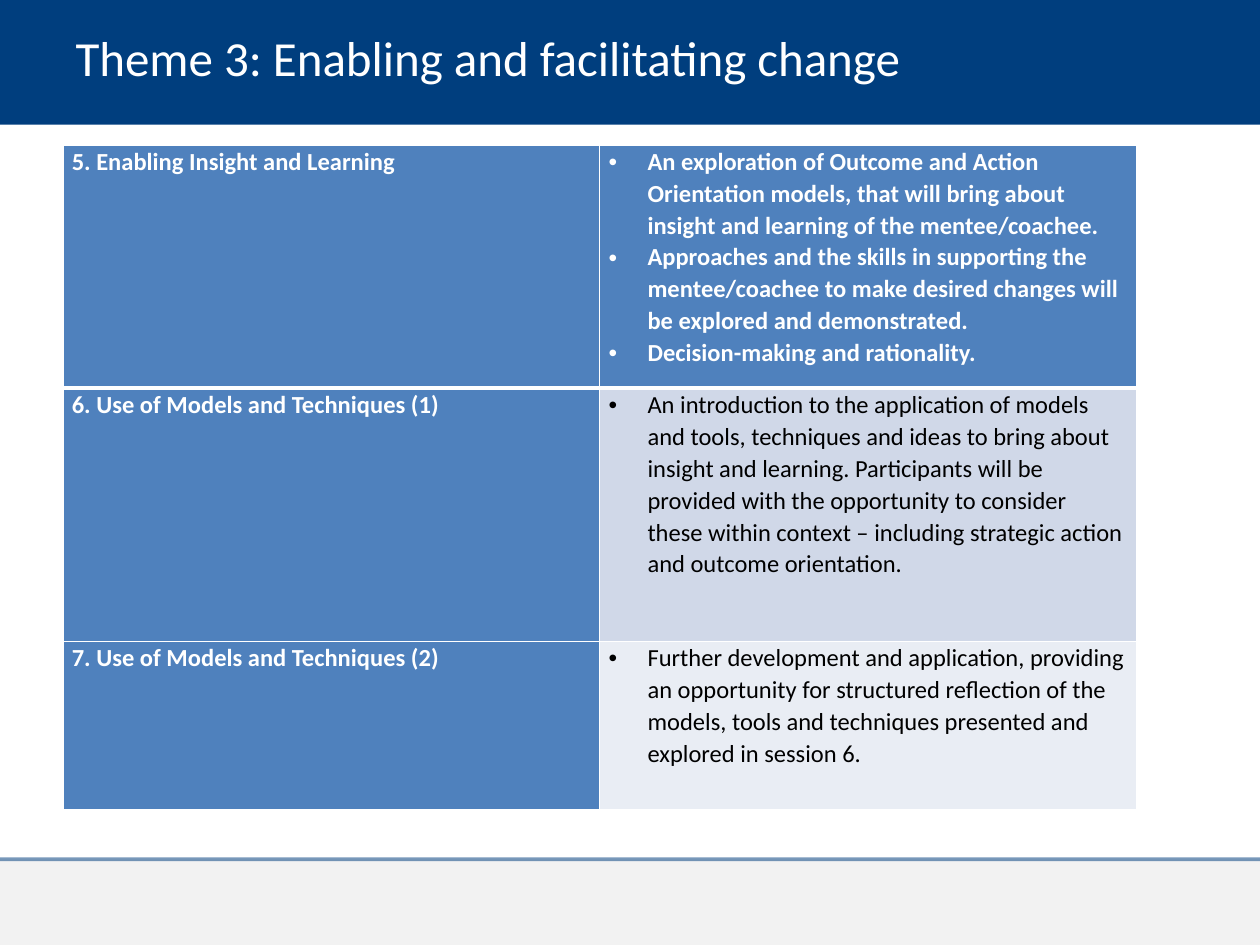
from dataclasses import dataclass

from lxml.etree import SubElement
from pptx import Presentation
from pptx.dml.color import RGBColor
from pptx.enum.shapes import MSO_CONNECTOR, MSO_SHAPE
from pptx.enum.text import MSO_ANCHOR, PP_ALIGN
from pptx.oxml.ns import qn
from pptx.util import Inches, Pt


@dataclass(frozen=True)
class Theme:
    """Hold the colours, font and type sizes."""
    navy: str = "003E7E"
    grey: str = "808080"
    blue: str = "4F81BD"
    mid: str = "D0D8E8"
    pale: str = "E9EDF4"
    white: str = "FFFFFF"
    black: str = "000000"
    face: str = "Calibri"
    head: int = 28
    body: int = 14


THEME = Theme()
TITLE = "Theme 3: Enabling and facilitating change"
ROWS = [
    (1.93, "5. Enabling Insight and Learning", THEME.blue, [
        "An exploration of Outcome and Action Orientation models, that will "
        "bring about insight and learning of the mentee/coachee.",
        "Approaches and the skills in supporting the mentee/coachee to make "
        "desired changes will be explored and demonstrated.",
        "Decision-making and rationality."]),
    (2.01, "6. Use of Models and Techniques (1)", THEME.mid, [
        "An introduction to the application of models and tools, techniques "
        "and ideas to bring about insight and learning. Participants will be "
        "provided with the opportunity to consider these within context – "
        "including strategic action and outcome orientation."]),
    (1.34, "7. Use of Models and Techniques (2)", THEME.pale, [
        "Further development and application, providing an opportunity for "
        "structured reflection of the models, tools and techniques presented "
        "and explored in session 6."]),
]


def apply(item, form):
    """Set each attribute of an item from a dict."""
    for name, value in form.items():
        setattr(item, name, value)


def style(font, size, tone, bold=False):
    """Format a font in the theme face."""
    apply(font, {"name": THEME.face, "size": Pt(size), "bold": bold})
    font.color.rgb = RGBColor.from_string(tone)


def fade(shape, share):
    """Give the first colour of a shape an opacity in percent."""
    tone = next(shape.element.spPr.iter(qn("a:srgbClr")))
    SubElement(tone, qn("a:alpha"), val=str(share * 1000))


def band(slide, box, tone):
    """Draw a plain filled band in the box."""
    shape = slide.shapes.add_shape(MSO_SHAPE.RECTANGLE, *map(Inches, box))
    shape.shadow.inherit = False
    shape.fill.solid()
    shape.fill.fore_color.rgb = RGBColor.from_string(tone)
    shape.line.fill.background()
    return shape


def header(slide, box):
    """Place the title on its navy band."""
    left, top, width, height = box
    band(slide, box, THEME.navy)
    title = slide.shapes.title
    slide.shapes.element.append(title.element)
    apply(title, {"left": Inches(left + 0.5), "top": Inches(top + 0.11),
                  "width": Inches(6.94), "height": Inches(0.69)})
    frame = title.text_frame
    apply(frame, {"text": TITLE, "word_wrap": True,
                  "vertical_anchor": MSO_ANCHOR.MIDDLE})
    para = frame.paragraphs[0]
    para.alignment = PP_ALIGN.LEFT
    style(para.font, THEME.head, THEME.white)


def footer(slide, box):
    """Draw the pale foot band with a rule along its top."""
    left, top, width, height = box
    fade(band(slide, box, THEME.grey), 10)
    rule = slide.shapes.add_connector(
        MSO_CONNECTOR.STRAIGHT,
        *map(Inches, (left, top, left + width, top)))
    rule.line.width = Pt(2.25)
    rule.line.color.rgb = RGBColor.from_string(THEME.navy)
    SubElement(rule.element.spPr, qn("a:effectLst"))
    fade(rule, 52)


def edge(cell, sides):
    """Draw white borders of the given point widths."""
    props = cell._tc.get_or_add_tcPr()
    for side, width in sides.items():
        line = SubElement(props, qn(f"a:ln{side}"), w=str(Pt(width)))
        fill = SubElement(line, qn("a:solidFill"))
        SubElement(fill, qn("a:srgbClr"), val=THEME.white)


def bullet(para):
    """Give a paragraph a hanging bullet."""
    props = para._p.get_or_add_pPr()
    props.set("marL", str(Inches(0.31)))
    props.set("indent", str(Inches(-0.31)))
    SubElement(props, qn("a:buFont"), typeface="Arial")
    SubElement(props, qn("a:buChar"), char="•")


def fill_cell(cell, texts, tone, sides, dots=False):
    """Write and format one table cell."""
    edge(cell, sides)
    cell.fill.solid()
    cell.fill.fore_color.rgb = RGBColor.from_string(tone)
    apply(cell, {"margin_left": Inches(0.07), "margin_right": Inches(0.07),
                 "margin_top": 0, "margin_bottom": 0})
    dark = tone == THEME.blue
    cell.text_frame.text = "\n".join(texts)
    for para in cell.text_frame.paragraphs:
        para.line_spacing = 1.07
        if dots:
            bullet(para)
        ink = THEME.white if dark else THEME.black
        for run in para.runs:
            style(run.font, THEME.body, ink, dark)


def grid(slide, box):
    """Build the table of sessions in the box."""
    frame = slide.shapes.add_table(len(ROWS), 2, *map(Inches, box))
    table = frame.table
    for col in table.columns:
        col.width = Inches(box[2] / 2)
    for at, (height, name, tone, points) in enumerate(ROWS):
        table.rows[at].height = Inches(height)
        sides = {"L": 1, "R": 1, "T": 3 if at == 1 else 1,
                 "B": 3 if at == 0 else 1}
        fill_cell(table.cell(at, 0), [name], THEME.blue, sides)
        fill_cell(table.cell(at, 1), points, tone, sides, True)


def main():
    """Build and save the slide."""
    deck = Presentation()
    apply(deck, {"slide_width": Inches(10), "slide_height": Inches(7.5)})
    slide = deck.slides.add_slide(deck.slide_layouts.get_by_name("Title Only"))
    header(slide, (0, 0, 10, 0.99))
    footer(slide, (0, 6.82, 10, 0.68))
    grid(slide, (0.5, 1.15, 8.52, 5.28))
    deck.save("out.pptx")


if __name__ == "__main__":
    main()
